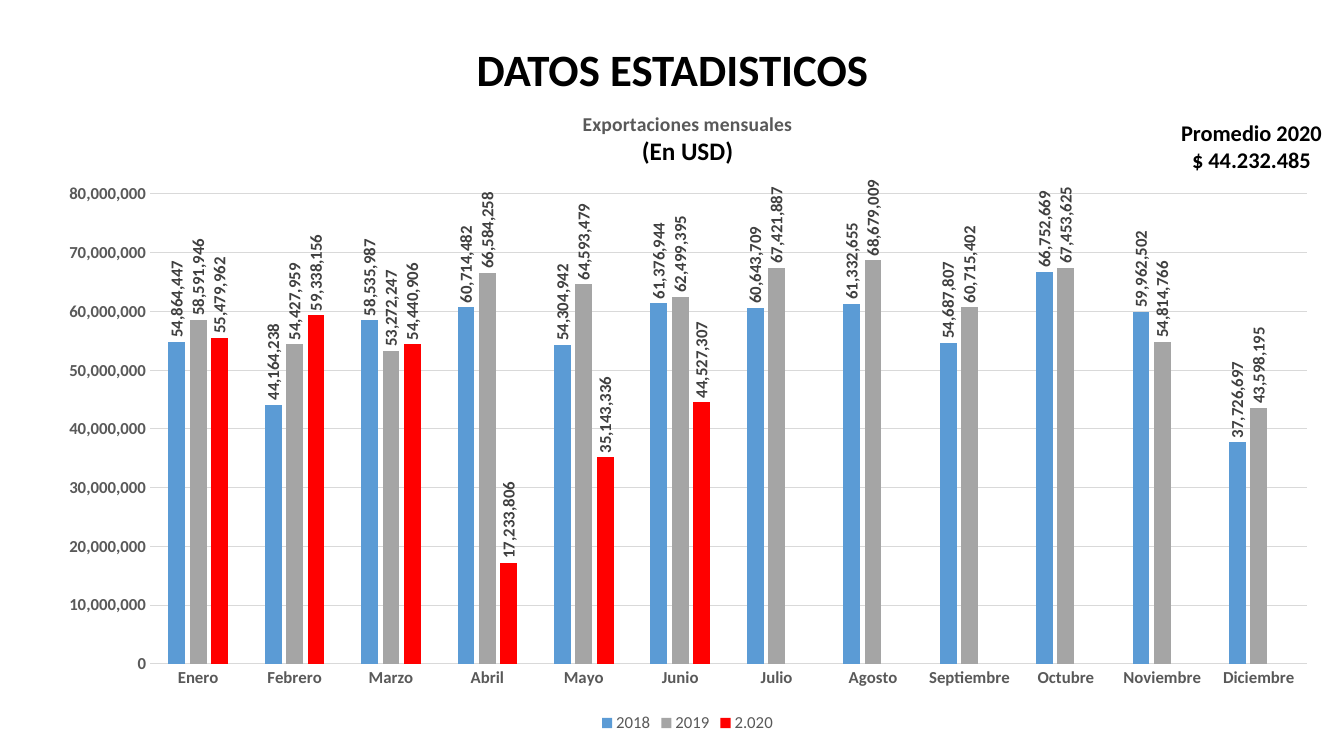
from dataclasses import dataclass

from lxml import etree
from pptx import Presentation
from pptx.chart.chart import Chart
from pptx.chart.data import CategoryChartData
from pptx.dml.color import RGBColor
from pptx.enum.chart import XL_CHART_TYPE, XL_LABEL_POSITION, XL_LEGEND_POSITION, XL_TICK_MARK
from pptx.enum.text import MSO_ANCHOR, MSO_AUTO_SIZE, PP_ALIGN
from pptx.oxml.ns import qn
from pptx.util import Emu, Pt

EMU_PER_PX = 914400 / 100.8
COLUMNS = XL_CHART_TYPE.COLUMN_CLUSTERED
OUTSIDE_END = XL_LABEL_POSITION.OUTSIDE_END
LEGEND_BOTTOM = XL_LEGEND_POSITION.BOTTOM
NO_TICK = XL_TICK_MARK.NONE
CENTER = PP_ALIGN.CENTER
MIDDLE = MSO_ANCHOR.MIDDLE
GROW = MSO_AUTO_SIZE.SHAPE_TO_FIT_TEXT
NUMBER_FORMAT = "#,##0"


@dataclass(frozen=True)
class Theme:
    font: str = "Calibri"
    ink: str = "000000"
    axis_text: str = "595959"
    label_text: str = "404040"
    rule: str = "D9D9D9"
    heading_size: int = 32
    unit_size: int = 18
    average_size: int = 16
    chart_title_size: int = 14
    chart_size: int = 12
    rule_width: float = 0.75


@dataclass(frozen=True)
class Box:
    left: int
    top: int
    width: int
    height: int

    def emu(self) -> tuple[Emu, ...]:
        return tuple(px(v) for v in (self.left, self.top, self.width, self.height))


@dataclass(frozen=True)
class YearExports:
    year: str
    color: str
    values: tuple[int | None, ...]


THEME = Theme()
SLIDE = Box(0, 0, 1344, 756)
HEADING = Box(93, -1, 1159, 146)
CHART = Box(43, 89, 1289, 648)
PLOT = Box(150, 194, 1157, 470)
AVERAGE = Box(1170, 114, 163, 65)

MONTHS = ("Enero", "Febrero", "Marzo", "Abril", "Mayo", "Junio", "Julio", "Agosto",
          "Septiembre", "Octubre", "Noviembre", "Diciembre")
EXPORTS = (
    YearExports("2018", "5B9BD5", (
        54864447, 44164238, 58535987, 60714482, 54304942, 61376944,
        60643709, 61332655, 54687807, 66752669, 59962502, 37726697)),
    YearExports("2019", "A5A5A5", (
        58591946, 54427959, 53272247, 66584258, 64593479, 62499395,
        67421887, 68679009, 60715402, 67453625, 54814766, 43598195)),
    YearExports("2.020", "FF0000", (
        55479962, 59338156, 54440906, 17233806, 35143336, 44527307) + (None,) * 6),
)


def px(value: int) -> Emu:
    return Emu(round(value * EMU_PER_PX))


def style_font(font, size: int, color: str, bold: bool = True) -> None:
    font.name = THEME.font
    font.size = Pt(size)
    font.bold = bold
    font.color.rgb = RGBColor.from_string(color)


def style_rule(line) -> None:
    line.color.rgb = RGBColor.from_string(THEME.rule)
    line.width = Pt(THEME.rule_width)


def add_line(paragraph, text: str, size: int, color: str = THEME.ink) -> None:
    """Fill a paragraph with one centred bold run."""
    paragraph.alignment = CENTER
    run = paragraph.add_run()
    run.text = text
    style_font(run.font, size, color)


def place_plot(chart: Chart) -> None:
    """Fix the inner plot area at PLOT, as fractions of the chart."""
    plot_area = chart.element.find(".//" + qn("c:plotArea"))
    for automatic in plot_area.findall(qn("c:layout")):
        plot_area.remove(automatic)
    layout = etree.Element(qn("c:layout"))
    manual = etree.SubElement(layout, qn("c:manualLayout"))
    settings = {
        "layoutTarget": "inner", "xMode": "edge", "yMode": "edge",
        "x": (PLOT.left - CHART.left) / CHART.width,
        "y": (PLOT.top - CHART.top) / CHART.height,
        "w": PLOT.width / CHART.width,
        "h": PLOT.height / CHART.height,
    }
    for tag, value in settings.items():
        etree.SubElement(manual, qn(f"c:{tag}")).set("val", str(value))
    plot_area.insert(0, layout)


def style_axes(chart: Chart) -> None:
    months, dollars = chart.category_axis, chart.value_axis
    for axis in (months, dollars):
        axis.major_tick_mark = axis.minor_tick_mark = NO_TICK
        style_font(axis.tick_labels.font, THEME.chart_size, THEME.axis_text)
    style_rule(months.format.line)
    dollars.format.line.fill.background()
    style_rule(dollars.major_gridlines.format.line)
    dollars.minimum_scale, dollars.maximum_scale = 0, 80_000_000
    dollars.major_unit = 10_000_000
    dollars.tick_labels.number_format = NUMBER_FORMAT
    dollars.tick_labels.number_format_is_linked = False


def style_columns(chart: Chart) -> None:
    plot = chart.plots[0]
    plot.gap_width, plot.overlap = 219, -27
    plot.vary_by_categories = False
    for series, exports in zip(plot.series, EXPORTS):
        series.invert_if_negative = False
        series.format.fill.solid()
        series.format.fill.fore_color.rgb = RGBColor.from_string(exports.color)
        labels = series.data_labels
        labels.show_value = True
        labels.position = OUTSIDE_END
        labels.number_format = NUMBER_FORMAT
        labels.number_format_is_linked = False
        style_font(labels.font, THEME.chart_size, THEME.label_text)
    for body in chart.element.xpath(".//c:dLbls//a:bodyPr"):
        body.set("rot", "-5400000")
        body.set("vert", "horz")


def add_exports_chart(slide) -> None:
    data = CategoryChartData(number_format=NUMBER_FORMAT)
    data.categories = MONTHS
    for exports in EXPORTS:
        data.add_series(exports.year, exports.values)
    chart = slide.shapes.add_chart(COLUMNS, *CHART.emu(), data).chart
    style_font(chart.font, THEME.chart_size, THEME.ink, bold=False)

    chart_title = chart.chart_title.text_frame
    add_line(chart_title.paragraphs[0], "Exportaciones mensuales",
             THEME.chart_title_size, THEME.axis_text)
    add_line(chart_title.add_paragraph(), "(En USD)", THEME.unit_size)

    chart.has_legend = True
    chart.legend.position = LEGEND_BOTTOM
    chart.legend.include_in_layout = False
    style_font(chart.legend.font, THEME.chart_size, THEME.axis_text, bold=False)
    style_axes(chart)
    style_columns(chart)
    place_plot(chart)


def add_heading(slide) -> None:
    heading = slide.shapes.title
    heading.left, heading.top, heading.width, heading.height = HEADING.emu()
    frame = heading.text_frame
    frame.vertical_anchor = MIDDLE
    frame.paragraphs[0].line_spacing = 0.9
    add_line(frame.paragraphs[0], "DATOS ESTADISTICOS", THEME.heading_size)


def add_average(slide) -> None:
    frame = slide.shapes.add_textbox(*AVERAGE.emu()).text_frame
    frame.word_wrap = False
    frame.auto_size = GROW
    add_line(frame.paragraphs[0], "Promedio 2020", THEME.average_size)
    add_line(frame.add_paragraph(), "$ 44.232.485", THEME.average_size)


def main() -> None:
    deck = Presentation()
    deck.slide_width, deck.slide_height = px(SLIDE.width), px(SLIDE.height)
    slide = deck.slides.add_slide(deck.slide_layouts.get_by_name("Title Only"))
    add_heading(slide)
    add_exports_chart(slide)
    add_average(slide)
    deck.save("out.pptx")


if __name__ == "__main__":
    main()
